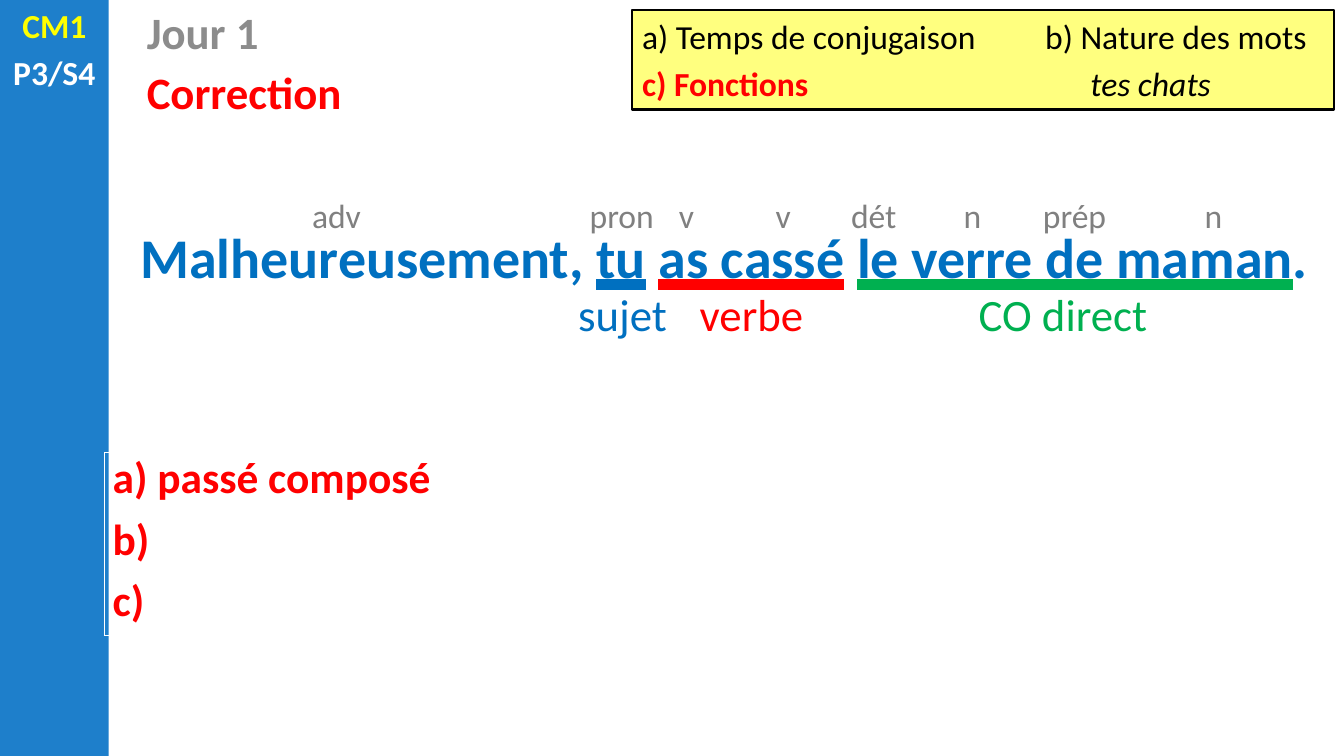
from collections import namedtuple
from dataclasses import dataclass

from lxml.etree import SubElement
from pptx import Presentation
from pptx.dml.color import RGBColor
from pptx.enum.shapes import MSO_SHAPE
from pptx.enum.text import MSO_UNDERLINE, PP_ALIGN
from pptx.oxml.ns import qn
from pptx.util import Cm, Pt


@dataclass(frozen=True)
class Theme:
    font: str = "Calibri"
    sidebar: str = "1E7FCB"
    yellow: str = "FFFF00"
    white: str = "FFFFFF"
    black: str = "000000"
    day: str = "8C8C8C"
    nature: str = "808080"
    blue: str = "0070C0"
    red: str = "FF0000"
    green: str = "00B050"
    small: int = 24
    answer: int = 31
    large: int = 32
    sentence: int = 40


THEME = Theme()
Box = namedtuple("Box", "left top width height")

SENTENCE = [  # words, underline colour
    ("Malheureusement, ", None),
    ("tu", THEME.blue),
    (" ", None),
    ("as cassé", THEME.red),
    (" ", None),
    ("le verre de maman", THEME.green),
    (".", None),
]
NATURES = [  # label, centre from the left of the sentence
    ("adv", 5.84), ("pron", 13.03), ("v", 14.66), ("v", 17.1),
    ("dét", 19.38), ("n", 21.87), ("prép", 24.44), ("n", 27.94),
]
FUNCTIONS = [  # label, centre, width, colour
    ("sujet", 13.05, 3.15, THEME.blue),
    ("verbe", 16.3, 3.15, THEME.red),
    ("CO direct", 24.15, 5.79, THEME.green),
]
ANSWERS = ["a) passé composé", "b)", "c)"]


def rgb(colour):
    return RGBColor.from_string(colour)


def style(font, size, colour, bold=False):
    font.name = THEME.font
    font.size = Pt(size)
    font.bold = bold
    font.color.rgb = rgb(colour)


def next_paragraph(frame):
    """Return the empty first paragraph, or a new one after the text."""
    first = frame.paragraphs[0]
    return frame.add_paragraph() if first.runs else first


def add_line(frame, text, size, colour, bold=False, align=PP_ALIGN.LEFT):
    line = next_paragraph(frame)
    line.alignment = align
    line.space_before = Pt(size * 0.2)
    style(line.font, size, colour, bold)
    if text:
        line.add_run().text = text
    return line


def add_frame(slide, box):
    frame = slide.shapes.add_textbox(*map(Cm, box)).text_frame
    frame.word_wrap = True
    return frame


def add_panel(slide, box, colour):
    panel = slide.shapes.add_shape(MSO_SHAPE.RECTANGLE, *map(Cm, box))
    panel.shadow.inherit = False
    panel.fill.solid()
    panel.fill.fore_color.rgb = rgb(colour)
    panel.line.fill.background()
    return panel


def add_sidebar(slide, box):
    add_panel(slide, box, THEME.sidebar)
    frame = add_frame(slide, box._replace(height=2.51))
    for text, colour in (("CM1", THEME.yellow), ("P3/S4", THEME.white)):
        add_line(frame, text, THEME.small, colour, True, PP_ALIGN.CENTER)


def add_heading(slide, box):
    day = Box(box.left, box.top, box.width, 1.63)
    correction = day._replace(top=box.top + 1.5)
    add_line(add_frame(slide, day), "Jour 1", THEME.large, THEME.day, True)
    add_line(add_frame(slide, correction), "Correction", THEME.large, THEME.red, True)


def add_tab_stop(line, position):
    stops = line._p.get_or_add_pPr().makeelement(qn("a:tabLst"))
    SubElement(stops, qn("a:tab"), pos=str(Cm(position)), algn="l")
    line.font._element.addprevious(stops)


def add_instructions(slide, box):
    panel = add_panel(slide, box, THEME.yellow)
    fill_colour = panel._element.spPr.find(qn("a:solidFill"))[0]
    SubElement(fill_colour, qn("a:alpha"), val="50000")
    panel.line.color.rgb = rgb(THEME.black)
    panel.line.width = Pt(1.5)
    frame = panel.text_frame
    frame.word_wrap = True

    tasks = add_line(frame, "a) Temps de conjugaison\tb) Nature des mots",
                     THEME.small, THEME.black)
    add_tab_stop(tasks, 10.16)

    current = add_line(frame, "", THEME.small, THEME.black)
    add_tab_stop(current, 11.3)
    task = current.add_run()
    task.text = "c) Fonctions\t"
    style(task.font, THEME.small, THEME.red, True)
    example = current.add_run()
    example.text = "tes chats"
    style(example.font, THEME.small, THEME.black)
    example.font.italic = True


def underline(run, colour):
    run.font.underline = MSO_UNDERLINE.HEAVY_LINE
    line_fill = SubElement(run.font._element, qn("a:uFill"))
    solid = SubElement(line_fill, qn("a:solidFill"))
    SubElement(solid, qn("a:srgbClr"), val=colour)


def add_analysis(slide, box):
    """Place the sentence with word natures above and functions below."""
    frame = add_frame(slide, Box(box.left, box.top + 0.71, box.width, 1.96))
    sentence = add_line(frame, "", THEME.sentence, THEME.blue, True, PP_ALIGN.CENTER)
    for words, colour in SENTENCE:
        run = sentence.add_run()
        run.text = words
        if colour:
            underline(run, colour)

    def add_label(text, centre, top, width, height, size, colour):
        label = Box(box.left + centre - width / 2, box.top + top, width, height)
        add_line(add_frame(slide, label), text, size, colour, align=PP_ALIGN.CENTER)

    for nature, centre in NATURES:
        add_label(nature, centre, 0, 2.29, 1.27, THEME.small, THEME.nature)
    for function, centre, width, colour in FUNCTIONS:
        add_label(function, centre, 2.31, width, 1.63, THEME.large, colour)


def add_answers(slide, box):
    table = slide.shapes.add_table(1, 1, *map(Cm, box)).table
    table.first_row = table.horz_banding = False
    cell = table.cell(0, 0)
    cell.fill.background()
    cell.margin_left = cell.margin_right = Cm(0.2)
    cell.margin_top = cell.margin_bottom = 0
    for text in ANSWERS:
        answer = add_line(cell.text_frame, text, THEME.answer, THEME.red, True)
        answer.space_before = 0
        answer.space_after = Pt(6)


def main():
    presentation = Presentation()
    presentation.slide_width = Cm(33.87)
    presentation.slide_height = Cm(19.05)
    slide = presentation.slides.add_slide(presentation.slide_layouts[6])
    add_sidebar(slide, Box(0, 0, 2.74, 19.05))
    add_heading(slide, Box(3.45, 0, 12.27, 3.13))
    add_instructions(slide, Box(15.93, 0.25, 17.7, 2.51))
    add_analysis(slide, Box(2.64, 4.78, 31.22, 3.94))
    add_answers(slide, Box(2.64, 11.4, 31.22, 4.62))
    presentation.save("out.pptx")


if __name__ == "__main__":
    main()
